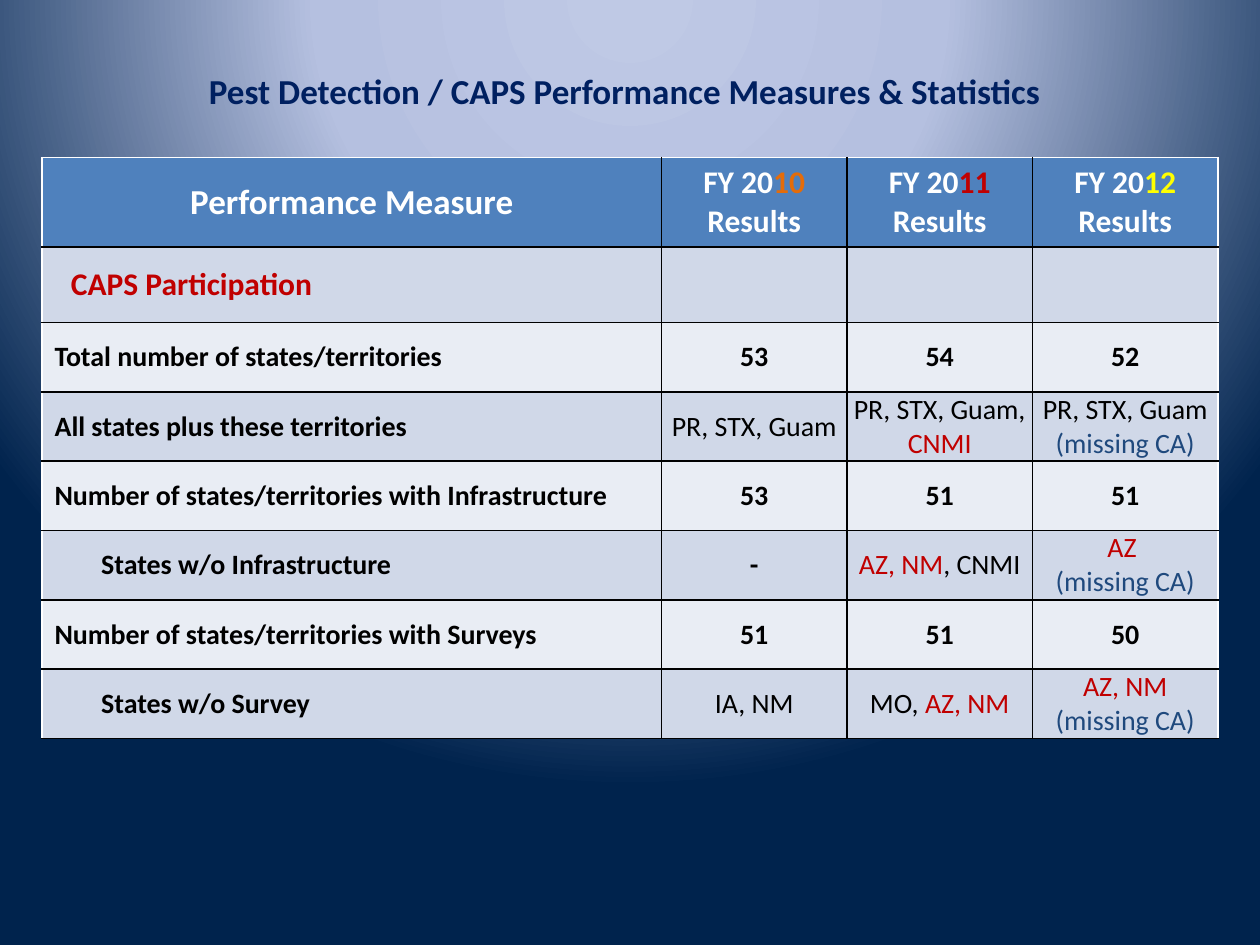
from pptx import Presentation
from pptx.dml.color import RGBColor
from pptx.enum.text import MSO_ANCHOR as Anchor, PP_ALIGN as Align
from pptx.oxml import parse_xml
from pptx.oxml.ns import nsdecls, qn
from pptx.util import Pt

THEME = {
    "font": "Calibri",
    "title_size": 20, "header_size": 18, "body_size": 16,
    "navy": "002060", "white": "FFFFFF", "black": "000000",
    "orange": "E46C0A", "red": "C00000", "yellow": "FFFF00", "blue": "1F497D",
    "header_fill": "4F81BD", "dark_band": "D0D8E8", "light_band": "E9EDF4",
    "backdrop": [(0, "BFC9E5"), (40, "B5C0E0"), (100, "00234D")],
}

# Content: a cell is a list of paragraphs, a paragraph a list of (text, colour)
TITLE = "Pest Detection / CAPS Performance Measures & Statistics"


def plain(text, colour="black"):
    return [[(text, colour)]]


def year(digits, colour):
    return [[("FY 20", "white"), (digits, colour), (" Results", "white")]]


MISSING = ("(missing CA)", "blue")
HEADER = [plain("Performance Measure", "white"),
          year("10", "orange"), year("11", "red"), year("12", "yellow")]
# Each measure: label cell, indent, whether its results are bold, results
MEASURES = [
    (plain("CAPS Participation", "red"), 9.36, True, [[], [], []]),
    (plain("Total number of states/territories"), 0, True,
     [plain("53"), plain("54"), plain("52")]),
    (plain("All states plus these territories"), 0, False,
     [plain("PR, STX, Guam"),
      [[("PR, STX, Guam, ", "black"), ("CNMI", "red")]],
      [[("PR, STX, Guam ", "black"), MISSING]]]),
    (plain("Number of states/territories with Infrastructure"), 0, True,
     [plain("53"), plain("51"), plain("51")]),
    (plain("States w/o Infrastructure"), 26.64, False,
     [plain("-"),
      [[("AZ, NM", "red"), (", CNMI", "black")]],
      [[("AZ ", "red")], [MISSING]]]),
    (plain("Number of states/territories with Surveys"), 0, True,
     [plain("51"), plain("51"), plain("50")]),
    (plain("States w/o Survey"), 26.64, False,
     [plain("IA, NM"),
      [[("MO, ", "black"), ("AZ, NM", "red")]],
      [[("AZ, NM", "red")], [MISSING]]]),
]

# Geometry in points
LEFT, TOP = 24, 90
COLUMNS = [354] + [106] * 3
ROWS = [50.4, 43.2] + [39.6] * 6


def rgb(name):
    return RGBColor.from_string(THEME[name])


def set_font(font, size, bold=True):
    font.name, font.size, font.bold = THEME["font"], Pt(size), bold


def paint_background(slide):
    slide.background.fill.solid()
    solid = slide.element.find(".//" + qn("p:bgPr")).find(qn("a:solidFill"))
    stops = "".join(f'<a:gs pos="{at * 1000}"><a:srgbClr val="{colour}"/></a:gs>'
                    for at, colour in THEME["backdrop"])
    solid.getparent().replace(solid, parse_xml(
        f'<a:gradFill {nsdecls("a")} rotWithShape="1"><a:gsLst>{stops}</a:gsLst>'
        '<a:path path="circle"><a:fillToRect l="50000" t="-80000" r="50000" b="180000"/>'
        '</a:path></a:gradFill>'))


def add_title(slide):
    box = slide.shapes.add_textbox(Pt(112.3), Pt(36), Pt(493.9), Pt(31.7))
    box.text_frame.word_wrap = False
    paragraph = box.text_frame.paragraphs[0]
    set_font(paragraph.font, THEME["title_size"])
    run = paragraph.add_run()
    run.text = TITLE
    run.font.color.rgb = rgb("navy")
    # Soft shadow below the letters
    run.font.fill  # the colour precedes the effect in the run properties
    run.font._element.append(parse_xml(
        f'<a:effectLst {nsdecls("a")}><a:outerShdw blurRad="38100" dist="38100" '
        'dir="2700000" algn="tl"><a:srgbClr val="000000"><a:alpha val="43000"/>'
        '</a:srgbClr></a:outerShdw></a:effectLst>'))


def set_borders(cell, colours):
    properties = cell._tc.get_or_add_tcPr()
    for index, (side, colour) in enumerate(colours.items()):
        properties.insert(index, parse_xml(
            f'<a:ln{side} {nsdecls("a")} w="12700"><a:solidFill>'
            f'<a:srgbClr val="{THEME[colour]}"/></a:solidFill></a:ln{side}>'))


def write_cell(cell, content, size, bold, align, indent=0):
    frame = cell.text_frame
    cell.vertical_anchor = Anchor.MIDDLE
    for index, runs in enumerate(content or [[]]):
        paragraph = frame.add_paragraph() if index else frame.paragraphs[0]
        paragraph.alignment = align
        set_font(paragraph.font, size, bold)
        if indent:
            paragraph._p.get_or_add_pPr().set("marL", str(Pt(indent)))
        for text, colour in runs:
            run = paragraph.add_run()
            run.text = text
            run.font.color.rgb = rgb(colour)


def add_measures(slide):
    table = slide.shapes.add_table(len(ROWS), len(COLUMNS), Pt(LEFT), Pt(TOP),
                                   Pt(sum(COLUMNS)), Pt(sum(ROWS))).table
    table.first_row = table.horz_banding = False
    for column, width in zip(table.columns, COLUMNS):
        column.width = Pt(width)
    for row, height in zip(table.rows, ROWS):
        row.height = Pt(height)

    # Header row
    for c, content in enumerate(HEADER):
        size = THEME["header_size"] if c else THEME["title_size"]
        write_cell(table.cell(0, c), content, size, True, Align.CENTER)

    # Measures and their results
    for r, (label, indent, bold, results) in enumerate(MEASURES, 1):
        size = THEME["header_size"] if r == 1 else THEME["body_size"]
        write_cell(table.cell(r, 0), label, size, True, Align.LEFT, indent)
        for c, content in enumerate(results, 1):
            cell = table.cell(r, c)
            cell.margin_left = cell.margin_right = 0
            cell.margin_top = cell.margin_bottom = 0
            write_cell(cell, content, size, bold or content == plain("-"), Align.CENTER)

    # Banding, with white outer edges except at the bottom
    last = len(COLUMNS) - 1
    for r in range(len(ROWS)):
        band = "dark_band" if r % 2 else "light_band"
        for c in range(len(COLUMNS)):
            cell = table.cell(r, c)
            cell.fill.solid()
            cell.fill.fore_color.rgb = rgb(band if r else "header_fill")
            set_borders(cell, {"L": "black" if c else "white",
                               "R": "white" if c == last else "black",
                               "T": "black" if r else "white",
                               "B": "black"})


def main():
    deck = Presentation()
    deck.slide_width, deck.slide_height = Pt(720), Pt(540)
    slide = deck.slides.add_slide(deck.slide_layouts[6])
    paint_background(slide)
    add_measures(slide)
    add_title(slide)
    deck.save("out.pptx")


if __name__ == "__main__":
    main()
